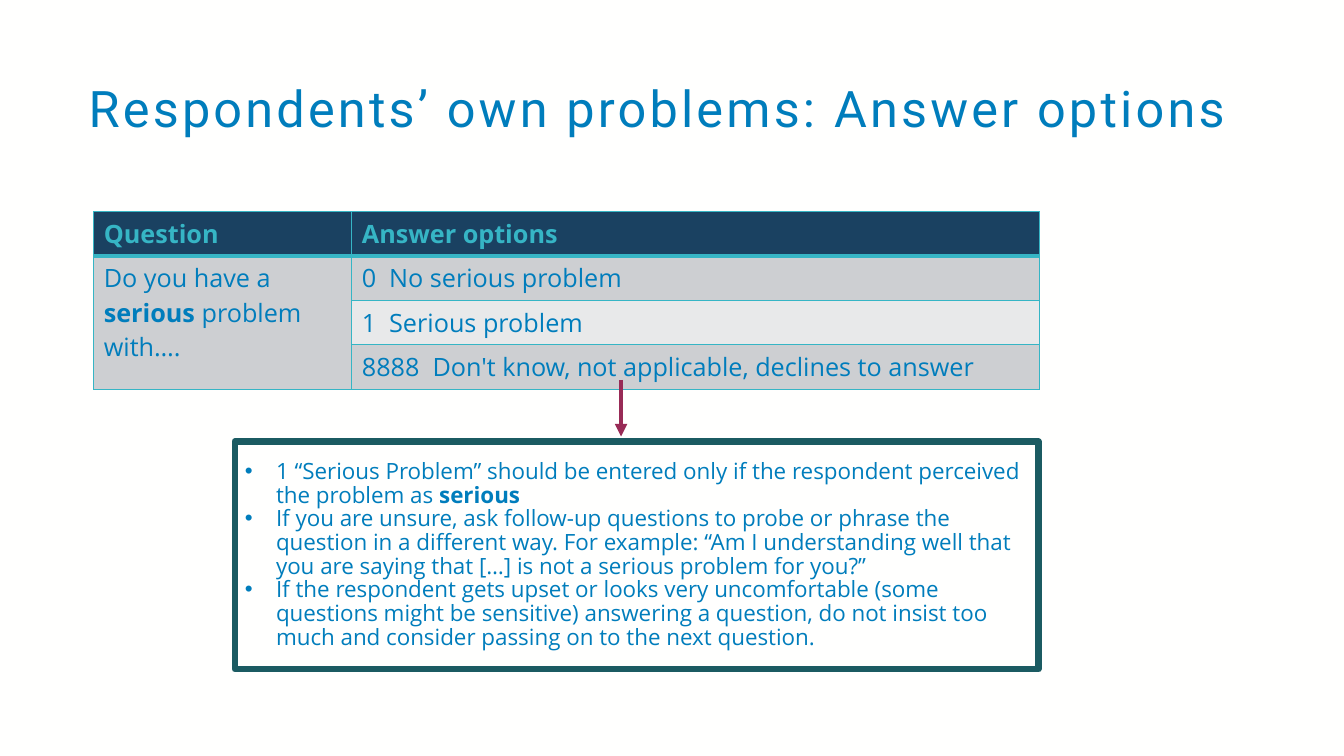
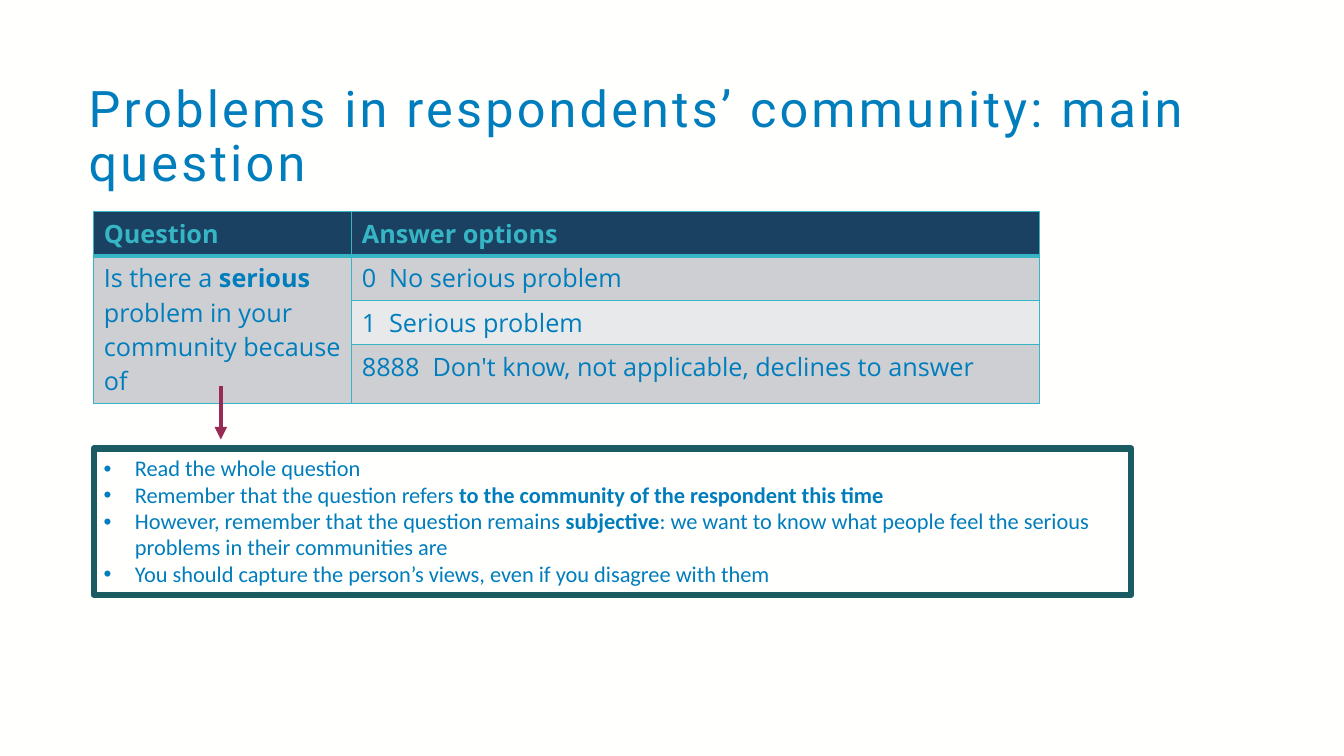
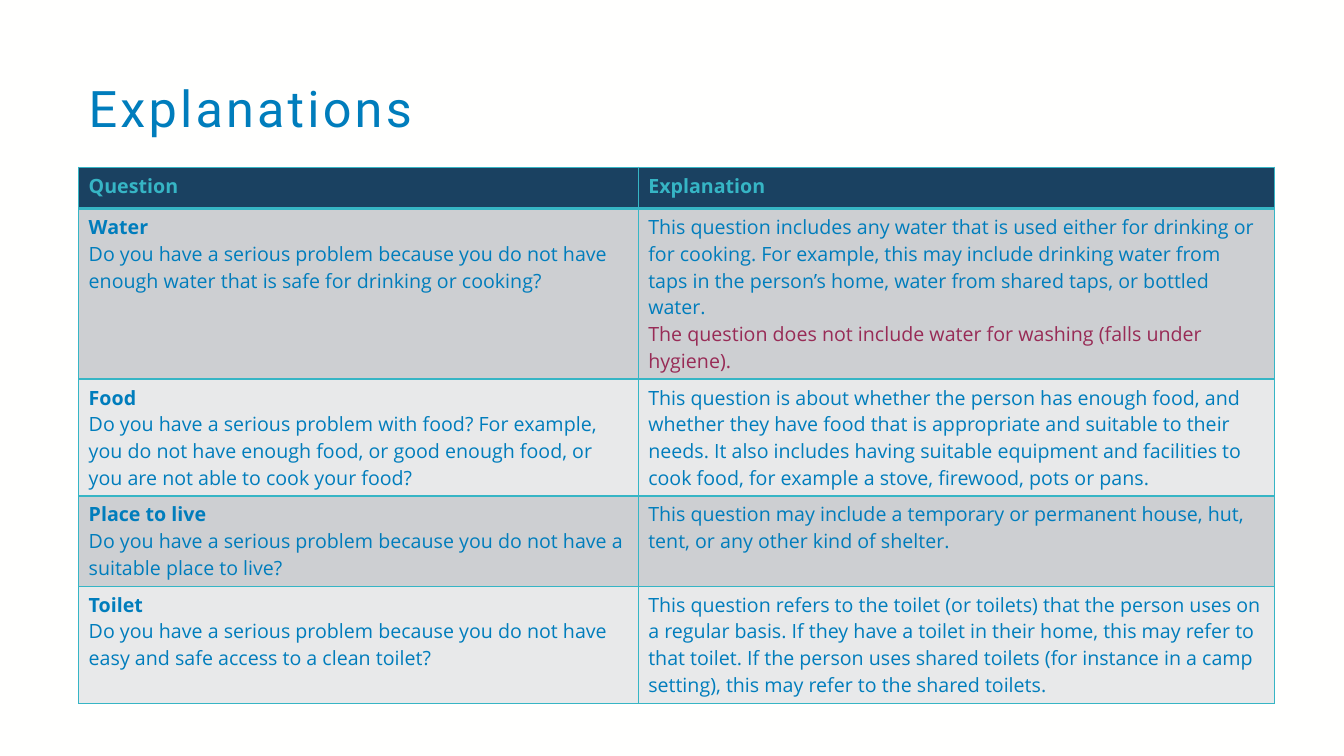
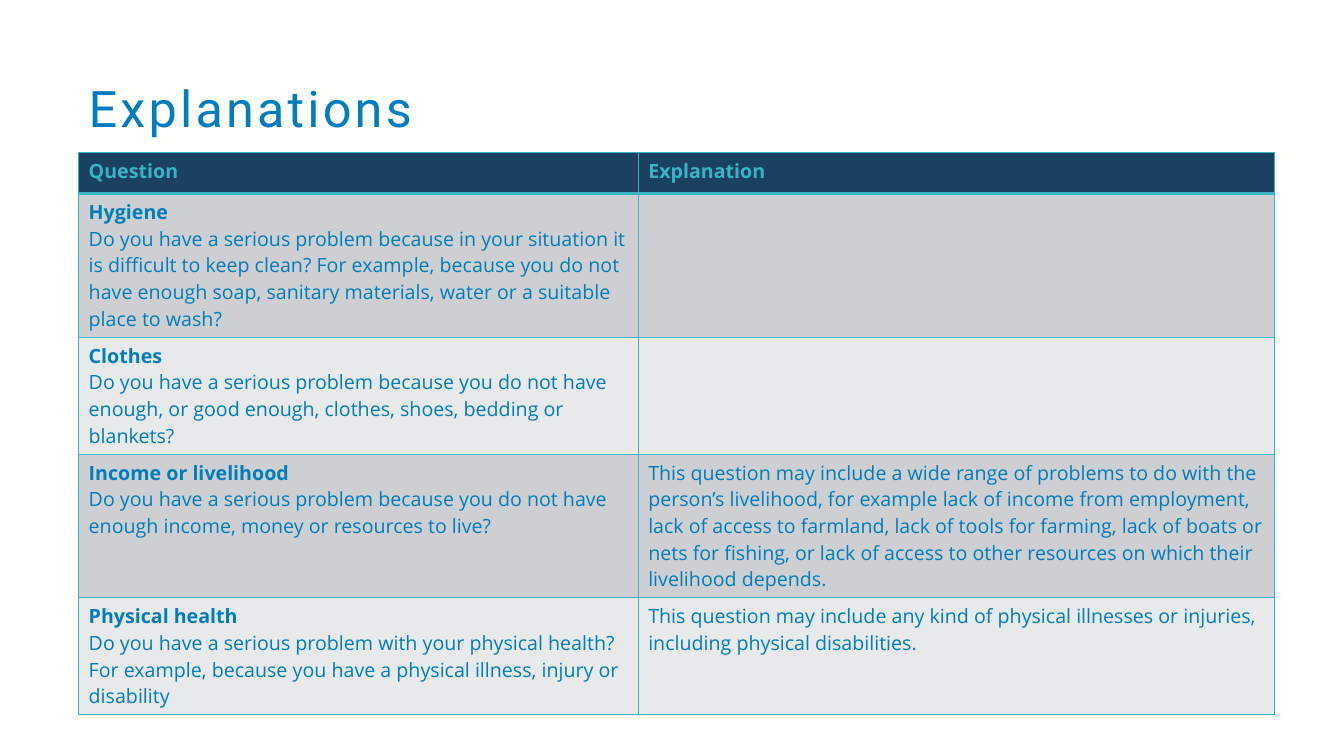
from dataclasses import dataclass
from typing import Any

import lxml.etree
import pptx
import pptx.dml.color
import pptx.enum.dml
import pptx.enum.shapes
import pptx.enum.text
import pptx.oxml.ns
import pptx.util

Inches = pptx.util.Inches
Pt = pptx.util.Pt
qn = pptx.oxml.ns.qn

BLUE, TEAL, NAVY = "007DBC", "36B5C5", "1A4161"
PLUM, PINE, PAPER = "982B56", "1B5B62", "FFFFFE"
BANDS = ("CDCFD2", "E8E9EA")
BODY_FONT = "Open Sans"


@dataclass(frozen=True)
class Span:
    text: str
    bold: bool = False
    color: str = BLUE


Line = list[Span]
Cell = list[Line]


@dataclass(frozen=True)
class Grid:
    left: float
    top: float
    height: float
    columns: tuple[float, ...]
    rows: tuple[float, ...]
    size: int
    cells: list[list[Cell]]
    tabs: tuple[float, ...] = ()
    merge_question: bool = False


@dataclass(frozen=True)
class Note:
    left: float
    top: float
    width: float
    height: float
    font: str
    spacing: float
    lines: list[Line]


@dataclass(frozen=True)
class Arrow:
    x: float
    top: float
    bottom: float


@dataclass(frozen=True)
class Page:
    title: str
    grid: Grid
    note: Note | None = None
    arrow: Arrow | None = None


# Shared helpers
def rgb(color: str) -> pptx.dml.color.RGBColor:
    return pptx.dml.color.RGBColor.from_string(color)


def apply(target: Any, values: dict[str, Any]) -> None:
    for name, value in values.items():
        setattr(target, name, value)


def child(parent: Any, tag: str, **attributes: str) -> Any:
    element = lxml.etree.SubElement(parent, qn(tag))
    for name, value in attributes.items():
        element.set(name, value)
    return element


def write_line(para: Any, line: Line, font: str, size: int) -> None:
    for span in line:
        run = para.add_run()
        run.text = span.text
        apply(run.font, {"name": font, "size": Pt(size), "bold": span.bold})
        run.font.color.rgb = rgb(span.color)


def paragraph_at(frame: Any, index: int) -> Any:
    return frame.paragraphs[0] if index == 0 else frame.add_paragraph()


# Slide parts
def draw_title(slide: Any, text: str) -> None:
    box = slide.shapes.title
    apply(box, {"left": Inches(0.78), "top": Inches(0.78),
                "width": Inches(12.09), "height": Inches(0.72)})
    apply(box.text_frame, {"word_wrap": True,
                           "auto_size": pptx.enum.text.MSO_AUTO_SIZE.NONE,
                           "vertical_anchor": pptx.enum.text.MSO_ANCHOR.TOP})
    para = box.text_frame.paragraphs[0]
    apply(para, {"alignment": pptx.enum.text.PP_ALIGN.LEFT, "line_spacing": 0.9})
    write_line(para, [Span(text)], "Roboto", 36)
    para.runs[0]._r.get_or_add_rPr().set("spc", "230")


def add_borders(cell: Any, row: int) -> None:
    properties = cell._tc.get_or_add_tcPr()
    for side in "LRTB":
        thick = (row, side) in ((0, "B"), (1, "T"))
        line = child(properties, f"a:ln{side}", w=str(Pt(3 if thick else 1)))
        child(child(line, "a:solidFill"), "a:srgbClr", val=TEAL)


def add_tabs(para: Any, stops: tuple[float, ...]) -> None:
    tab_list = child(para._p.get_or_add_pPr(), "a:tabLst")
    for stop in stops:
        child(tab_list, "a:tab", pos=str(Inches(stop)), algn="l")


def draw_grid(slide: Any, grid: Grid) -> None:
    holder = slide.shapes.add_table(
        len(grid.rows), len(grid.columns), Inches(grid.left), Inches(grid.top),
        Inches(sum(grid.columns)), Inches(grid.height))
    table = holder.table
    table.horz_banding = False
    for column, width in zip(table.columns, grid.columns):
        column.width = Inches(width)
    for row, height in zip(table.rows, grid.rows):
        row.height = Inches(height)
    holder.height = Inches(grid.height)
    if grid.merge_question:
        table.cell(1, 0).merge(table.cell(len(grid.rows) - 1, 0))
    for r, row_cells in enumerate(grid.cells):
        for c, lines in enumerate(row_cells):
            cell = table.cell(r, c)
            add_borders(cell, r)
            cell.fill.solid()
            cell.fill.fore_color.rgb = rgb(NAVY if r == 0 else BANDS[(r - 1) % 2])
            for index, line in enumerate(lines):
                para = paragraph_at(cell.text_frame, index)
                if grid.tabs and r and c:
                    add_tabs(para, grid.tabs)
                write_line(para, line, BODY_FONT, grid.size)


def draw_note(slide: Any, note: Note) -> None:
    box = slide.shapes.add_shape(
        pptx.enum.shapes.MSO_SHAPE.RECTANGLE, Inches(note.left), Inches(note.top),
        Inches(note.width), Inches(note.height))
    box.shadow.inherit = False
    box.fill.background()
    box.line.color.rgb = rgb(PINE)
    box.line.width = Pt(4.5)
    apply(box.text_frame, {"word_wrap": True,
                           "vertical_anchor": pptx.enum.text.MSO_ANCHOR.MIDDLE})
    for index, line in enumerate(note.lines):
        para = paragraph_at(box.text_frame, index)
        properties = para._p.get_or_add_pPr()
        properties.set("marL", str(Inches(0.31)))
        properties.set("indent", str(-Inches(0.31)))
        child(properties, "a:buFont", typeface="Arial")
        child(properties, "a:buChar", char="•")
        apply(para, {"alignment": pptx.enum.text.PP_ALIGN.LEFT,
                     "line_spacing": note.spacing})
        write_line(para, line, note.font, 16)


def draw_arrow(slide: Any, arrow: Arrow) -> None:
    line = slide.shapes.add_connector(
        pptx.enum.shapes.MSO_CONNECTOR.STRAIGHT, Inches(arrow.x), Inches(arrow.top),
        Inches(arrow.x), Inches(arrow.bottom))
    line.line.color.rgb = rgb(PLUM)
    line.line.width = Pt(3)
    child(line.line._get_or_add_ln(), "a:tailEnd", type="triangle")
    child(line._element.spPr, "a:effectLst")


# Table patterns
def header(*labels: str) -> list[Cell]:
    return [[[Span(label, True, TEAL)]] for label in labels]


def answer_grid(question: Line, height: float) -> Grid:
    answers = ("0\tNo serious problem", "1\tSerious problem",
               "8888\tDon't know, not applicable, declines to answer")
    body = [[[question] if index == 0 else [], [[Span(answer)]]]
            for index, answer in enumerate(answers)]
    return Grid(0.93, 2.1, height, (2.56, 6.82), (0.41,) * 4, 18,
                [header("Question", "Answer options"), *body],
                tabs=(0.27, 0.7), merge_question=True)


def topic(name: str, question: str, *explanation: Span) -> list[Cell]:
    return [[[Span(name, True)], [Span(question)]], [[span] for span in explanation]]


def topic_grid(top: float, height: float, rows: tuple[float, ...],
               topics: list[list[Cell]]) -> Grid:
    return Grid(0.78, top, height, (5.55, 6.31), rows, 14,
                [header("Question", "Explanation"), *topics])


# Content
PAGES = [
    Page(
        "Respondents’ own problems: Answer options",
        answer_grid([Span("Do you have a "), Span("serious", True),
                     Span(" problem with….")], 1.62),
        Note(2.33, 4.38, 7.97, 2.26, BODY_FONT, 0.88, [
            [Span("1 “Serious Problem” should be entered only if the respondent "
                  "perceived the problem as "), Span("serious", True)],
            [Span("If you are unsure, ask follow-up questions to probe or phrase the "
                  "question in a different way. For example: “Am I understanding well "
                  "that you are saying that […] is not a serious problem for you?”")],
            [Span("If the respondent gets upset or looks very uncomfortable (some "
                  "questions might be sensitive) answering a question, do not insist "
                  "too much and consider passing on to the next question.")],
        ]),
        Arrow(6.16, 3.77, 4.33),
    ),
    Page(
        "Problems in respondents’ community: main question",
        answer_grid([Span("Is there a "), Span("serious", True),
                     Span(" problem in your community because of")], 1.71),
        Note(0.93, 4.45, 10.29, 1.45, "Calibri", 0.98, [
            [Span("Read the whole question")],
            [Span("Remember that the question refers "),
             Span("to the community of the respondent this time", True)],
            [Span("However, remember that the question remains "),
             Span("subjective", True),
             Span(": we want to know what people feel the serious problems in their "
                  "communities are")],
            [Span("You should capture the person’s views, even if you disagree "
                  "with them")],
        ]),
        Arrow(2.19, 3.83, 4.36),
    ),
    Page("Explanations", topic_grid(1.66, 4.58, (0.41, 0.41, 0.99, 0.84, 0.41), [
        topic("Water",
              "Do you have a serious problem because you do not have enough water that "
              "is safe for drinking or cooking?",
              Span("This question includes any water that is used either for drinking "
                   "or for cooking. For example, this may include drinking water from "
                   "taps in the person’s home, water from shared taps, or bottled "
                   "water."),
              Span("The question does not include water for washing (falls under "
                   "hygiene).", color=PLUM)),
        topic("Food",
              "Do you have a serious problem with food? For example, you do not have "
              "enough food, or good enough food, or you are not able to cook your food?",
              Span("This question is about whether the person has enough food, and "
                   "whether they have food that is appropriate and suitable to their "
                   "needs. It also includes having suitable equipment and facilities "
                   "to cook food, for example a stove, firewood, pots or pans.")),
        topic("Place to live",
              "Do you have a serious problem because you do not have a suitable place "
              "to live?",
              Span("This question may include a temporary or permanent house, hut, "
                   "tent, or any other kind of shelter.")),
        topic("Toilet",
              "Do you have a serious problem because you do not have easy and safe "
              "access to a clean toilet?",
              Span("This question refers to the toilet (or toilets) that the person "
                   "uses on a regular basis. If they have a toilet in their home, this "
                   "may refer to that toilet. If the person uses shared toilets (for "
                   "instance in a camp setting), this may refer to the shared toilets.")),
    ])),
    Page("Explanations", topic_grid(1.51, 5.01, (0.41, 0.48, 0.48, 0.52, 0.41), [
        topic("Hygiene",
              "Do you have a serious problem because in your situation it is difficult "
              "to keep clean? For example, because you do not have enough soap, "
              "sanitary materials, water or a suitable place to wash?"),
        topic("Clothes",
              "Do you have a serious problem because you do not have enough, or good "
              "enough, clothes, shoes, bedding or blankets?"),
        topic("Income or livelihood",
              "Do you have a serious problem because you do not have enough income, "
              "money or resources to live?",
              Span("This question may include a wide range of problems to do with the "
                   "person’s livelihood, for example lack of income from employment, "
                   "lack of access to farmland, lack of tools for farming, lack of "
                   "boats or nets for fishing, or lack of access to other resources on "
                   "which their livelihood depends.")),
        topic("Physical health",
              "Do you have a serious problem with your physical health? For example, "
              "because you have a physical illness, injury or disability",
              Span("This question may include any kind of physical illnesses or "
                   "injuries, including physical disabilities.")),
    ])),
]


def main() -> None:
    deck = pptx.Presentation()
    apply(deck, {"slide_width": Inches(13.33), "slide_height": Inches(7.5)})
    background = deck.slide_master.background.fill
    background.solid()
    background.fore_color.rgb = rgb(PAPER)
    for page in PAGES:
        slide = deck.slides.add_slide(deck.slide_layouts[5])
        draw_title(slide, page.title)
        draw_grid(slide, page.grid)
        if page.note:
            draw_note(slide, page.note)
        if page.arrow:
            draw_arrow(slide, page.arrow)
    deck.save("out.pptx")


if __name__ == "__main__":
    main()
